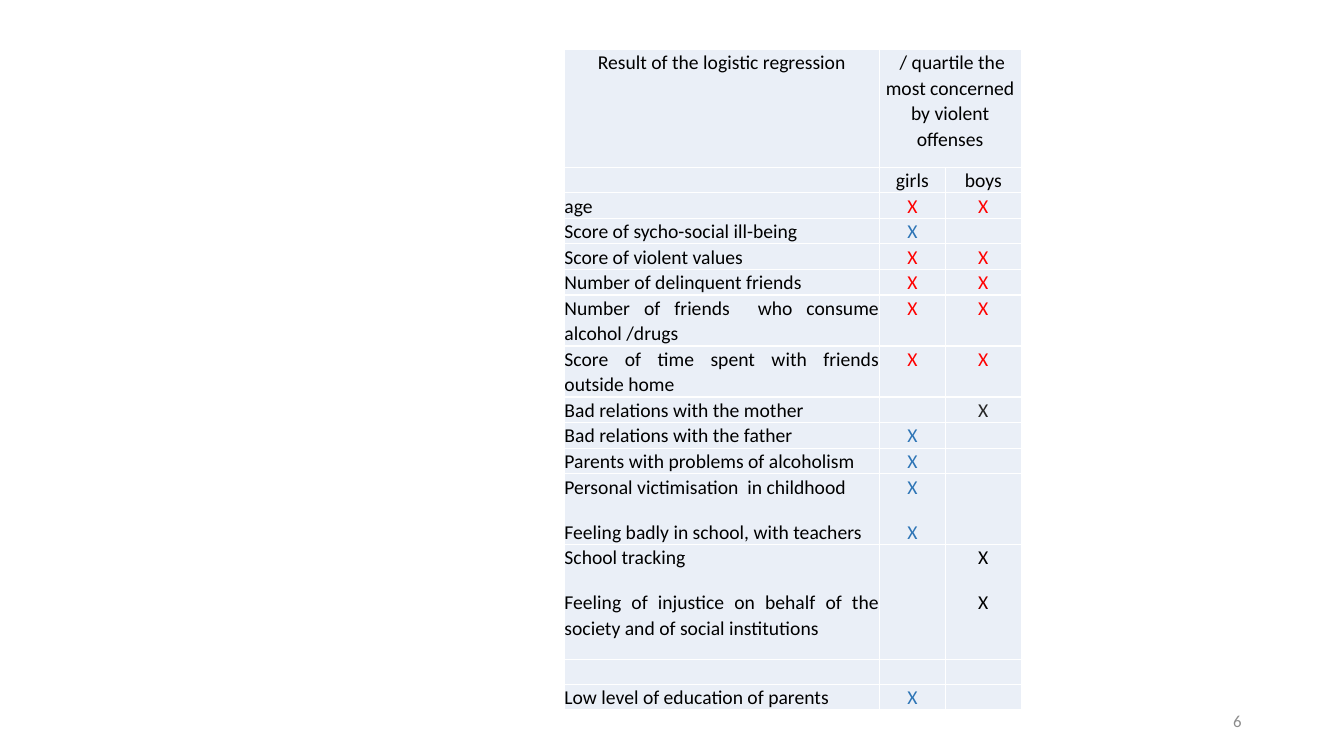
"""Build a slide with a table of logistic regression results for girls and boys."""
from lxml import etree
from pptx import Presentation
from pptx.dml.color import RGBColor
from pptx.enum.text import MSO_ANCHOR, PP_ALIGN
from pptx.oxml.ns import qn
from pptx.util import Pt

CENTER, JUSTIFY, RIGHT = PP_ALIGN.CENTER, PP_ALIGN.JUSTIFY, PP_ALIGN.RIGHT
MIDDLE = MSO_ANCHOR.MIDDLE

THEME = {
    "font": "Calibri", "body": 14, "number": 12, "border": 1,
    "black": "000000", "red": "FF0000", "blue": "2E75B6",
    "dark": "262626", "grey": "8C8C8C", "cell": "EAEFF7", "white": "FFFFFF",
}
LINE = 18
HEADINGS = [
    (84, "Result of the logistic regression",
     " / quartile the most concerned by violent offenses", ""),
    (LINE, "", "girls", "boys"),
]
FACTORS = [
    (LINE, "age", "X", "X", "red"),
    (LINE, "Score of sycho-social ill-being", "X", "", "blue"),
    (LINE, "Score of violent values ", "X", "X", "red"),
    (LINE, "Number of delinquent friends", "X", "X", "red"),
    (2 * LINE, "Number of friends  who consume alcohol /drugs", "X", "X", "red"),
    (2 * LINE, "Score of time spent with friends outside home", "X", "X", "red"),
    (LINE, "Bad relations with the mother", "", "X", "dark"),
    (LINE, "Bad relations with the father", "X", "", "blue"),
    (LINE, "Parents with problems of alcoholism", "X", "", "blue"),
    (50, "Personal victimisation  in childhood\nFeeling badly in school, with teachers",
     "X\nX", "", "blue"),
    (82, "School tracking\nFeeling of injustice on behalf of the society and of social institutions",
     "", "X\nX", "black"),
    (LINE, "", "", "", "black"),
    (LINE, "Low level of education of parents", "X", "", "blue"),
]
PAGE_NUMBER = "6"
COLUMN_WIDTHS = (224.8, 47.4, 54)
TABLE_LEFT, TABLE_TOP = 403.2, 35.4


def style_paragraph(para, align, color, size):
    """Set the alignment and font of one paragraph."""
    para.alignment = align
    para.font.name = THEME["font"]
    para.font.size = Pt(size)
    para.font.color.rgb = RGBColor.from_string(THEME[color])


def draw_borders(cell):
    """Give a cell thin white edges."""
    properties = cell._tc.get_or_add_tcPr()
    for edge in ("a:lnL", "a:lnR", "a:lnT", "a:lnB"):
        line = etree.SubElement(properties, qn(edge), w=str(Pt(THEME["border"])))
        fill = etree.SubElement(line, qn("a:solidFill"))
        etree.SubElement(fill, qn("a:srgbClr"), val=THEME["white"])


def fill_cell(cell, text, align, color):
    """Write and style one table cell."""
    cell.margin_left = cell.margin_right = cell.margin_top = cell.margin_bottom = 0
    draw_borders(cell)
    cell.fill.solid()
    cell.fill.fore_color.rgb = RGBColor.from_string(THEME["cell"])
    cell.text = text
    for para in cell.text_frame.paragraphs:
        style_paragraph(para, align, color, THEME["body"])
        para.line_spacing = 1.07
        para.space_before, para.space_after = Pt(6), Pt(8)
        if not text:
            etree.SubElement(para._p, qn("a:endParaRPr"), sz=str(THEME["body"] * 100))


def add_results(page):
    """Add the table of factors."""
    rows = [(*heading, "black") for heading in HEADINGS] + FACTORS
    frame = page.shapes.add_table(
        len(rows), len(COLUMN_WIDTHS), Pt(TABLE_LEFT), Pt(TABLE_TOP),
        Pt(sum(COLUMN_WIDTHS)), Pt(sum(row[0] for row in rows)))
    table = frame.table
    table.first_row = table.horz_banding = False
    for column, width in zip(table.columns, COLUMN_WIDTHS):
        column.width = Pt(width)
    for row_index, (height, *texts, mark_color) in enumerate(rows):
        table.rows[row_index].height = Pt(height)
        for column_index, text in enumerate(texts):
            is_factor = column_index == 0 and row_index >= len(HEADINGS)
            fill_cell(table.cell(row_index, column_index), text,
                      JUSTIFY if is_factor else CENTER,
                      "black" if is_factor else mark_color)
    table.cell(0, 1).merge(table.cell(0, 2))


def add_page_number(page):
    """Add the number at the lower right."""
    box = page.shapes.add_textbox(Pt(678), Pt(500.5), Pt(216), Pt(28.8))
    box.text_frame.word_wrap = True
    box.text_frame.vertical_anchor = MIDDLE
    box.text_frame.text = PAGE_NUMBER
    style_paragraph(box.text_frame.paragraphs[0], RIGHT, "grey", THEME["number"])


def main():
    """Create and save the deck."""
    deck = Presentation()
    deck.slide_width, deck.slide_height = Pt(960), Pt(540)
    page = deck.slides.add_slide(deck.slide_layouts[6])
    add_results(page)
    add_page_number(page)
    deck.save("out.pptx")


if __name__ == "__main__":
    main()
